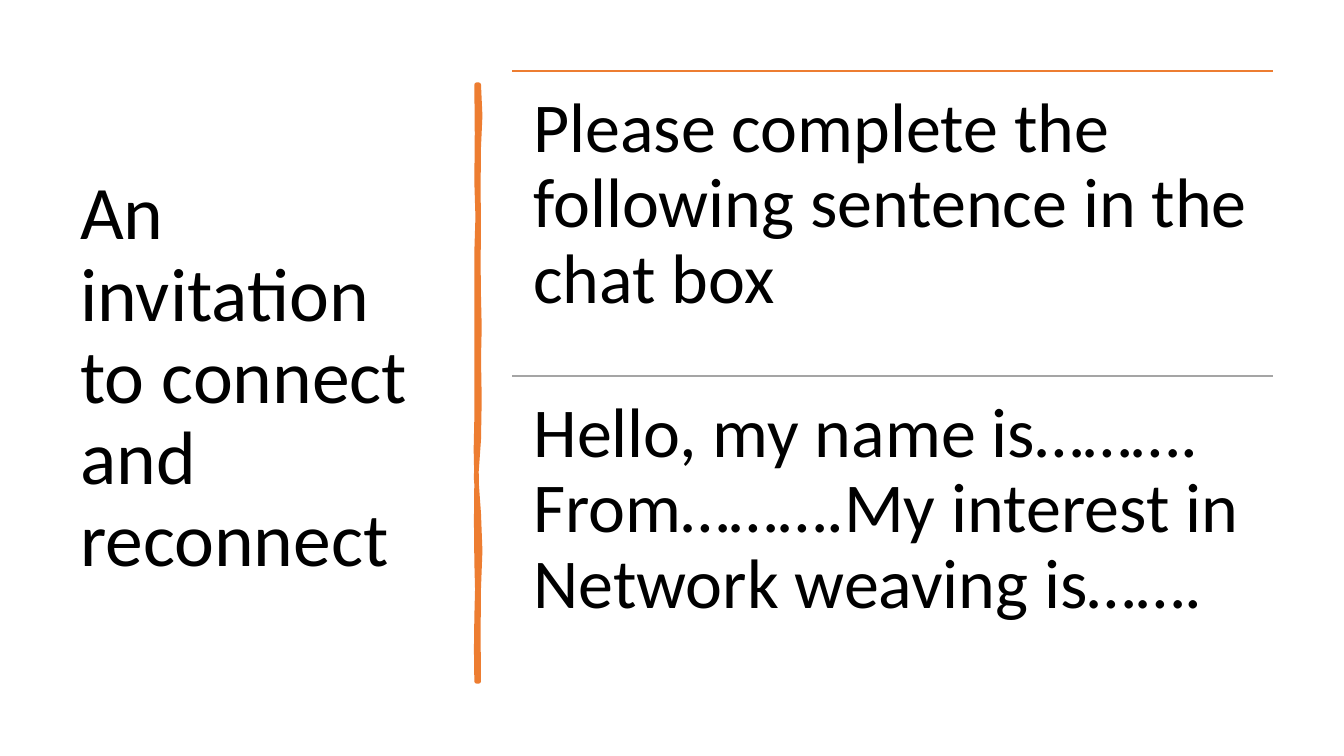
from lxml import etree
from pptx import Presentation
from pptx.dml.color import RGBColor
from pptx.enum.shapes import MSO_CONNECTOR
from pptx.enum.text import MSO_ANCHOR
from pptx.oxml.ns import qn
from pptx.util import Pt

LINE = MSO_CONNECTOR.STRAIGHT
TOP, MIDDLE = MSO_ANCHOR.TOP, MSO_ANCHOR.MIDDLE
COLORS = {"text": "000000", "orange": "ED7D31", "gray": "A5A5A5"}


def add_text(text, x, y, w, h, size, anchor=TOP, inset_x=7.2, inset_y=3.6):
    tf = slide.shapes.add_textbox(Pt(x), Pt(y), Pt(w), Pt(h)).text_frame
    tf.word_wrap = True
    tf.vertical_anchor = anchor
    tf.margin_left = tf.margin_right = Pt(inset_x)
    tf.margin_top = tf.margin_bottom = Pt(inset_y)
    p = tf.paragraphs[0]
    p.line_spacing = 0.9
    r = p.add_run()
    r.text = text
    r.font.name = "Calibri"
    r.font.size = Pt(size)
    r.font.color.rgb = RGBColor.from_string(COLORS["text"])


def edge_points(x, y, bends):
    """Trace a wavy vertical edge; each bend is (end y, sideways bulge halfway)."""
    points = []
    for end, bulge in bends:
        points += [(Pt(x + bulge), Pt((y + end) / 2)), (Pt(x), Pt(end))]
        y = end
    return points


prs = Presentation()
prs.slide_width, prs.slide_height = Pt(960), Pt(540)
slide = prs.slides.add_slide(prs.slide_layouts[6])

add_text("An invitation to connect and reconnect", 50.2, 50.4, 269, 440, 54, anchor=MIDDLE)

# Hand-drawn divider
BAR_TOP, BAR_BOTTOM, BAR_LEFT, BAR_RIGHT = 60.5, 486.7, 340.5, 342
right_bends = [(105, 1), (163, -0.3), (212, -0.3), (256, 0.5),
               (314, 0.5), (367, -1.9), (420, 1), (BAR_BOTTOM, -0.3)]
left_bends = [(441, -0.3), (401, 0.5), (343, -0.3), (299, -0.5),
              (241, 0), (180, 0), (130, 0.8), (BAR_TOP, 0.3)]
builder = slide.shapes.build_freeform(Pt(BAR_RIGHT), Pt(BAR_TOP))
builder.add_line_segments(edge_points(BAR_RIGHT, BAR_TOP, right_bends)
                          + [(Pt(BAR_LEFT), Pt(BAR_BOTTOM))]
                          + edge_points(BAR_LEFT, BAR_BOTTOM, left_bends))
bar = builder.convert_to_shape()
bar.shadow.inherit = False
bar.fill.solid()
bar.fill.fore_color.rgb = bar.line.color.rgb = RGBColor.from_string(COLORS["orange"])
bar.line.width = Pt(3.25)

# Two prompts, each under its own rule
PROMPT_X, PROMPT_Y, PROMPT_W, PROMPT_H = 366, 50.6, 543.6, 217.9
prompts = [("orange", "Please complete the following sentence in the chat box"),
           ("gray", "Hello, my name is………. From……….My interest in Network weaving is…….")]
for i, (color, text) in enumerate(prompts):
    y = PROMPT_Y + i * PROMPT_H
    rule = slide.shapes.add_connector(LINE, Pt(PROMPT_X), Pt(y), Pt(PROMPT_X + PROMPT_W), Pt(y))
    rule.line.color.rgb = RGBColor.from_string(COLORS[color])
    rule.line.width = Pt(1)
    etree.SubElement(rule._element.spPr, qn("a:effectLst"))
    add_text(text, PROMPT_X, y, PROMPT_W, PROMPT_H, 50, inset_x=15, inset_y=15)

prs.save("out.pptx")
